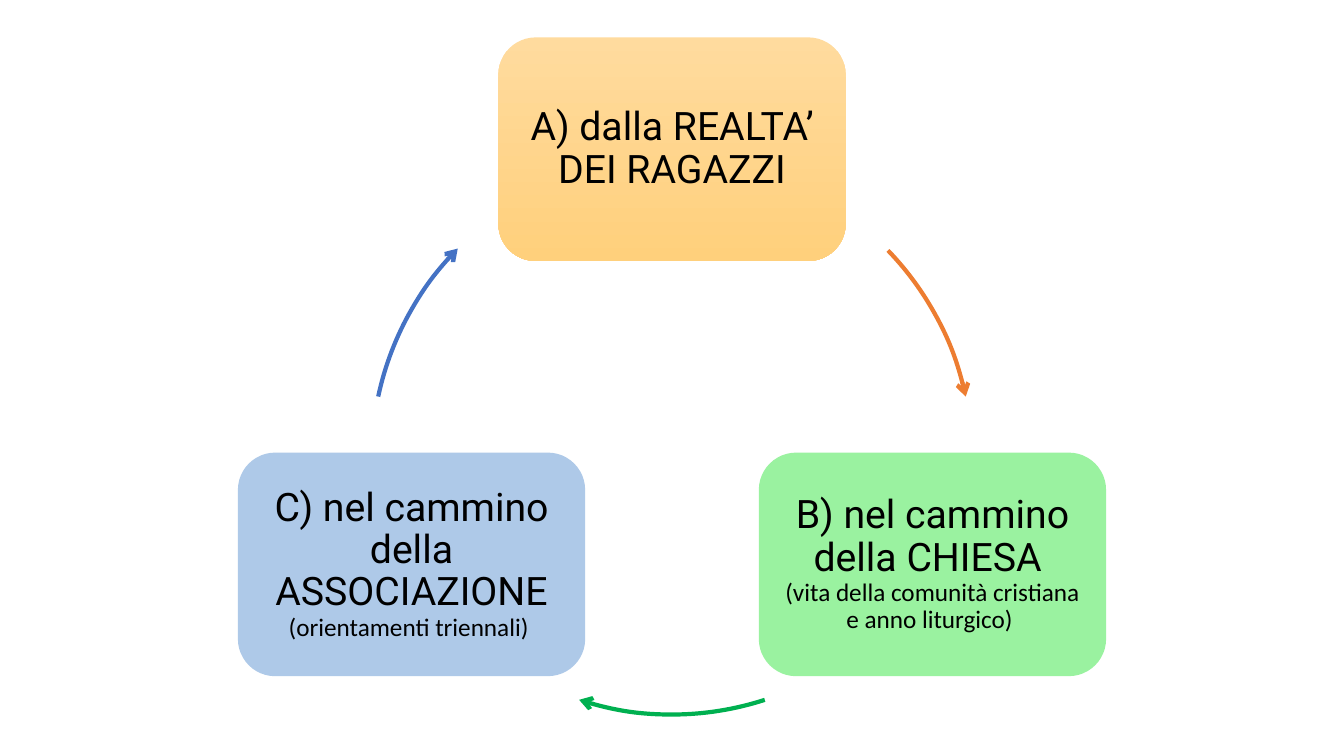
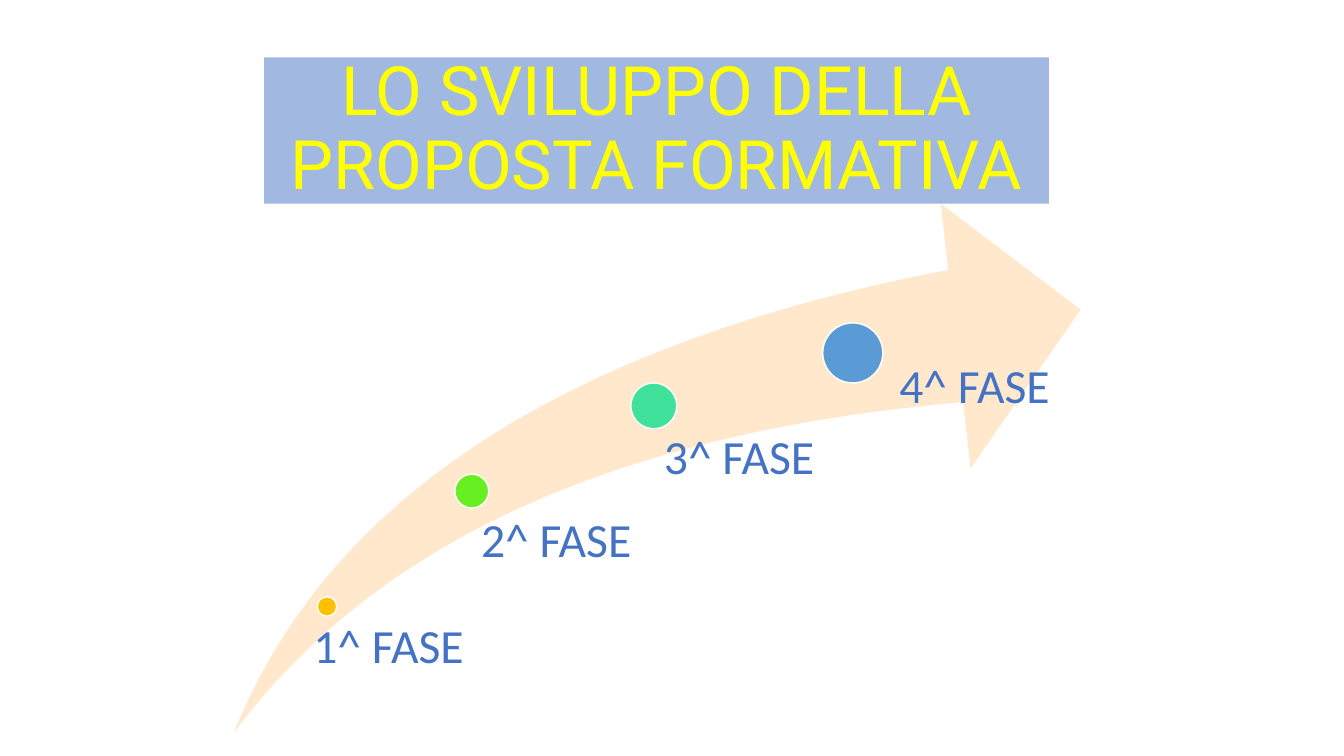
import pptx
import pptx.util
import pptx.dml.color
import pptx.enum.shapes
import pptx.enum.text
import pptx.oxml.ns
import lxml.etree

SHAPE = pptx.enum.shapes.MSO_SHAPE
ALIGN = pptx.enum.text.PP_ALIGN
ANCHOR = pptx.enum.text.MSO_ANCHOR
qn = pptx.oxml.ns.qn
WIDE, HIGH = 13.33, 7.5

COLORS = {
    "black": "000000", "white": "FFFFFF", "blue": "4472C4", "yellow": "FFFF00",
    "peach": "FFDB9E", "amber": "FFD07C", "mint": "9AF2A0", "sky": "AEC9E8",
    "orange": "ED7D31", "green": "00B050", "cream": "FFE8CC", "gold": "FFC000",
    "lime": "67EF21", "jade": "3FE19B", "azure": "5B9BD5",
}
HEAD, BODY = "Roboto", "Calibri"


def rgb(name):
    return pptx.dml.color.RGBColor.from_string(COLORS[name])


def part(box, x, y, w, h):
    """Box inside another box, given in percent of its size."""
    left, top, wide, high = box
    return (left + wide * x / 100, top + high * y / 100,
            wide * w / 100, high * h / 100)


def draw(slide, kind, box, fill=None, line=None, weight=1):
    """Preset shape; two fill names make a vertical gradient."""
    shape = slide.shapes.add_shape(kind, *[pptx.util.Inches(v) for v in box])
    shape.shadow.inherit = False
    if fill is None:
        shape.fill.background()
    elif isinstance(fill, tuple):
        shape.fill.gradient()
        shape.fill.gradient_angle = 270
        for stop, name in zip(shape.fill.gradient_stops, fill):
            stop.color.rgb = rgb(name)
    else:
        shape.fill.solid()
        shape.fill.fore_color.rgb = rgb(fill)
    if line:
        shape.line.color.rgb = rgb(line)
        shape.line.width = pptx.util.Pt(weight)
    else:
        shape.line.fill.background()
    return shape


def write(shape, runs, inset, align=ALIGN.CENTER, anchor=ANCHOR.MIDDLE):
    """One paragraph of (text, size, font, color) runs; None breaks the line."""
    frame = shape.text_frame
    frame.word_wrap = True
    frame.vertical_anchor = anchor
    frame.margin_left = frame.margin_right = pptx.util.Inches(inset)
    frame.margin_top = frame.margin_bottom = pptx.util.Inches(inset)
    para = frame.paragraphs[0]
    para.alignment = align
    para.line_spacing = 0.9
    for item in runs:
        if item is None:
            para.add_line_break()
            continue
        text, size, font, color = item
        run = para.add_run()
        run.text = text
        run.font.size = pptx.util.Pt(size)
        run.font.name = font
        run.font.color.rgb = rgb(color)


def big(text):
    return (text, 28, HEAD, "black")


def small(text):
    return (text, 18, BODY, "black")


# Cycle of three cards: column, row, fill, runs
CARDS = [
    (30, 0, ("peach", "amber"), [big("A) dalla REALTA’ DEI RAGAZZI")]),
    (60, 65, "mint", [big("B) nel cammino della CHIESA "), None,
                      small("(vita della comunità cristiana e anno liturgico) ")]),
    (0, 65, "sky", [big("C) nel cammino della"), None, big("ASSOCIAZIONE "),
                    small("(orientamenti triennali) ")]),
]
# Arrows: centre row, start and end angle (clockwise degrees), color
ARCS = [(66, 316, 348, "orange"), (59, 72, 108, "green"), (66, 192, 224.5, "blue")]


def cycle(slide, box):
    for col, row, fill, runs in CARDS:
        card = draw(slide, SHAPE.ROUNDED_RECTANGLE, part(box, col, row, 40, 35), fill)
        write(card, runs, 0.12)
    left, top, wide, high = box
    ring = 0.47 * high
    for row, start, end, color in ARCS:
        frame = (left + wide / 2 - ring, top + high * row / 100 - ring,
                 2 * ring, 2 * ring)
        arc = draw(slide, SHAPE.ARC, frame, line=color, weight=3)
        for i, angle in enumerate((start, end)):
            arc.adjustments[i] = angle * 0.6  # 60000 units a degree
        ln = arc._element.spPr.find(qn("a:ln"))
        lxml.etree.SubElement(ln, qn("a:tailEnd"), type="arrow")


def title(slide, box, text):
    band = draw(slide, SHAPE.RECTANGLE, box, "blue")
    tint = band._element.spPr.find(qn("a:solidFill"))[0]
    lxml.etree.SubElement(tint, qn("a:alpha"), val="50000")
    write(band, [(text, 48.6, HEAD, "yellow")], 0.05)


# Phases: dot centre, dot size, color, label corner, label
PHASES = [
    (11, 76.1, 2.3, "gold", 9.4, 79.2, "1^ FASE"),
    (28.1, 54.3, 4, "lime", 29.2, 59, "2^ FASE"),
    (49.6, 38.2, 5.4, "jade", 50.8, 43.4, "3^ FASE"),
    (73.1, 28.2, 7.1, "azure", 78.6, 29.9, "4^ FASE"),
]


def phases(slide, box):
    swoosh = draw(slide, SHAPE.SWOOSH_ARROW, box, "cream")
    swoosh.adjustments[0] = swoosh.adjustments[1] = 0.25
    ratio = box[2] / box[3]
    for x, y, size, color, col, row, text in PHASES:
        tall = size * ratio
        dot = part(box, x - size / 2, y - tall / 2, size, tall)
        draw(slide, SHAPE.OVAL, dot, color, "white")
        spot = [pptx.util.Inches(v) for v in part(box, col, row, 20, 12)]
        write(slide.shapes.add_textbox(*spot), [(text, 34, BODY, "blue")], 0,
              ALIGN.LEFT, ANCHOR.TOP)


def main():
    deck = pptx.Presentation()
    deck.slide_width = pptx.util.Inches(WIDE)
    deck.slide_height = pptx.util.Inches(HIGH)
    blank = deck.slide_layouts[6]
    page = (0, 0, WIDE, HIGH)

    cycle(deck.slides.add_slide(blank), part(page, 17.7, 4.95, 64.6, 84.5))

    steps = deck.slides.add_slide(blank)
    title(steps, part(page, 19.65, 7.6, 58.4, 19.35),
          "LO SVILUPPO DELLA PROPOSTA FORMATIVA")
    phases(steps, part(page, 17.4, 26.95, 63, 70))

    deck.save("out.pptx")


if __name__ == "__main__":
    main()
